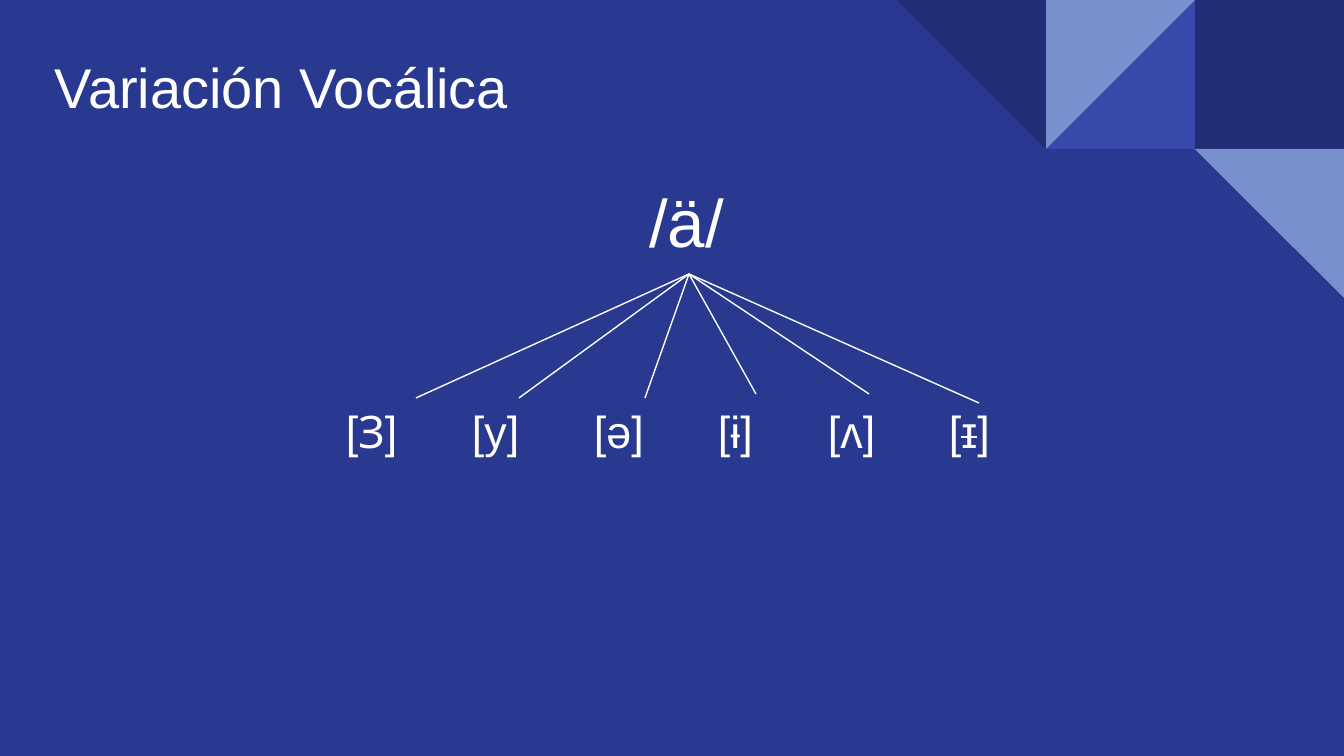
import dataclasses

import lxml.etree
import pptx
import pptx.dml.color
import pptx.enum.shapes
import pptx.enum.text
import pptx.oxml.ns
import pptx.util

EMU_PER_PX = 914400 / 134.4
SLIDE_WIDTH, SLIDE_HEIGHT = 1344, 756
TILE = 149
INSET = 13


@dataclasses.dataclass(frozen=True)
class Theme:
    background: str = "2A3990"
    navy: str = "212D74"
    indigo: str = "3949AB"
    sky: str = "7890CD"
    ink: str = "FFFFFF"
    font: str = "Arial"
    title_size: int = 30
    phoneme_size: int = 36
    allophone_size: int = 24
    branch_width: float = 0.75


THEME = Theme()

# Corner tiles: column from the right edge, row, colour, right-angle corner
RECTANGLE = None
TILES = [
    (1, 0, THEME.navy, RECTANGLE),
    (2, 0, THEME.indigo, "bottom right"),
    (2, 0, THEME.sky, "top left"),
    (3, 0, THEME.navy, "top right"),
    (1, 1, THEME.sky, "top right"),
]
# Rotation and horizontal flip that bring the right angle to each corner
CORNERS = {"bottom right": (0, True), "top left": (180, True), "top right": (180, False)}

# Wording and whether it is struck through; tab stops follow the first allophone
ALLOPHONES = [("[Ɜ]\t[y]\t[ə]\t[ɨ]\t[ʌ]\t[", False), ("ɪ", True), ("]", False)]
ALLOPHONE_TABS = [126, 248, 372, 482, 603]
BRANCH_ROOT = (689, 274)
BRANCH_ENDS = [(416, 398), (519, 398), (645, 398), (756, 394), (869, 394), (979, 403)]


def px(length):
    return pptx.util.Emu(round(length * EMU_PER_PX))


def rgb(colour):
    return pptx.dml.color.RGBColor.from_string(colour)


def add_tile(slide, column, row, colour, corner):
    kinds = pptx.enum.shapes.MSO_SHAPE
    kind = kinds.RECTANGLE if corner is RECTANGLE else kinds.RIGHT_TRIANGLE
    tile = slide.shapes.add_shape(
        kind, px(SLIDE_WIDTH - column * TILE), px(row * TILE), px(TILE), px(TILE))
    tile.shadow.inherit = False
    tile.fill.solid()
    tile.fill.fore_color.rgb = rgb(colour)
    tile.line.fill.background()
    if corner is not RECTANGLE:
        tile.rotation, flipped = CORNERS[corner]
        if flipped:
            tile.element.spPr.xfrm.set("flipH", "1")


def add_text(slide, left, top, width, height, pieces, size):
    box = slide.shapes.add_textbox(px(left), px(top), px(width), px(height))
    frame = box.text_frame
    frame.word_wrap = True
    frame.vertical_anchor = pptx.enum.text.MSO_ANCHOR.TOP
    frame.margin_left = frame.margin_right = px(INSET)
    frame.margin_top = frame.margin_bottom = px(INSET)
    paragraph = frame.paragraphs[0]
    for wording, struck in pieces:
        run = paragraph.add_run()
        run.text = wording
        run.font.name = THEME.font
        run.font.size = pptx.util.Pt(size)
        run.font.color.rgb = rgb(THEME.ink)
        if struck:
            run.font._element.set("strike", "sngStrike")
    return paragraph


def set_tabs(paragraph, positions):
    qn = pptx.oxml.ns.qn
    properties = paragraph._p.get_or_add_pPr()
    stops = lxml.etree.SubElement(properties, qn("a:tabLst"))
    for position in positions:
        lxml.etree.SubElement(stops, qn("a:tab"), pos=str(px(position)), algn="l")


def add_branch(slide, root, end):
    branch = slide.shapes.add_connector(
        pptx.enum.shapes.MSO_CONNECTOR.STRAIGHT, *map(px, root + end))
    branch.line.color.rgb = rgb(THEME.ink)
    branch.line.width = pptx.util.Pt(THEME.branch_width)
    lxml.etree.SubElement(branch.element.spPr, pptx.oxml.ns.qn("a:effectLst"))


def main():
    deck = pptx.Presentation()
    deck.slide_width, deck.slide_height = px(SLIDE_WIDTH), px(SLIDE_HEIGHT)
    slide = deck.slides.add_slide(deck.slide_layouts[6])
    slide.background.fill.solid()
    slide.background.fill.fore_color.rgb = rgb(THEME.background)

    # Corner ornament
    for tile in TILES:
        add_tile(slide, *tile)

    # Phoneme and its allophones
    add_text(slide, 636, 167, 108, 108, [("/ä/", False)], THEME.phoneme_size)
    allophones = add_text(slide, 333, 391, 677, 108, ALLOPHONES, THEME.allophone_size)
    set_tabs(allophones, ALLOPHONE_TABS)

    # Branches from the phoneme
    for end in BRANCH_ENDS:
        add_branch(slide, BRANCH_ROOT, end)

    # Title
    add_text(slide, 42, 40, 823, 113, [("Variación Vocálica", False)], THEME.title_size)

    deck.save("out.pptx")


if __name__ == "__main__":
    main()
